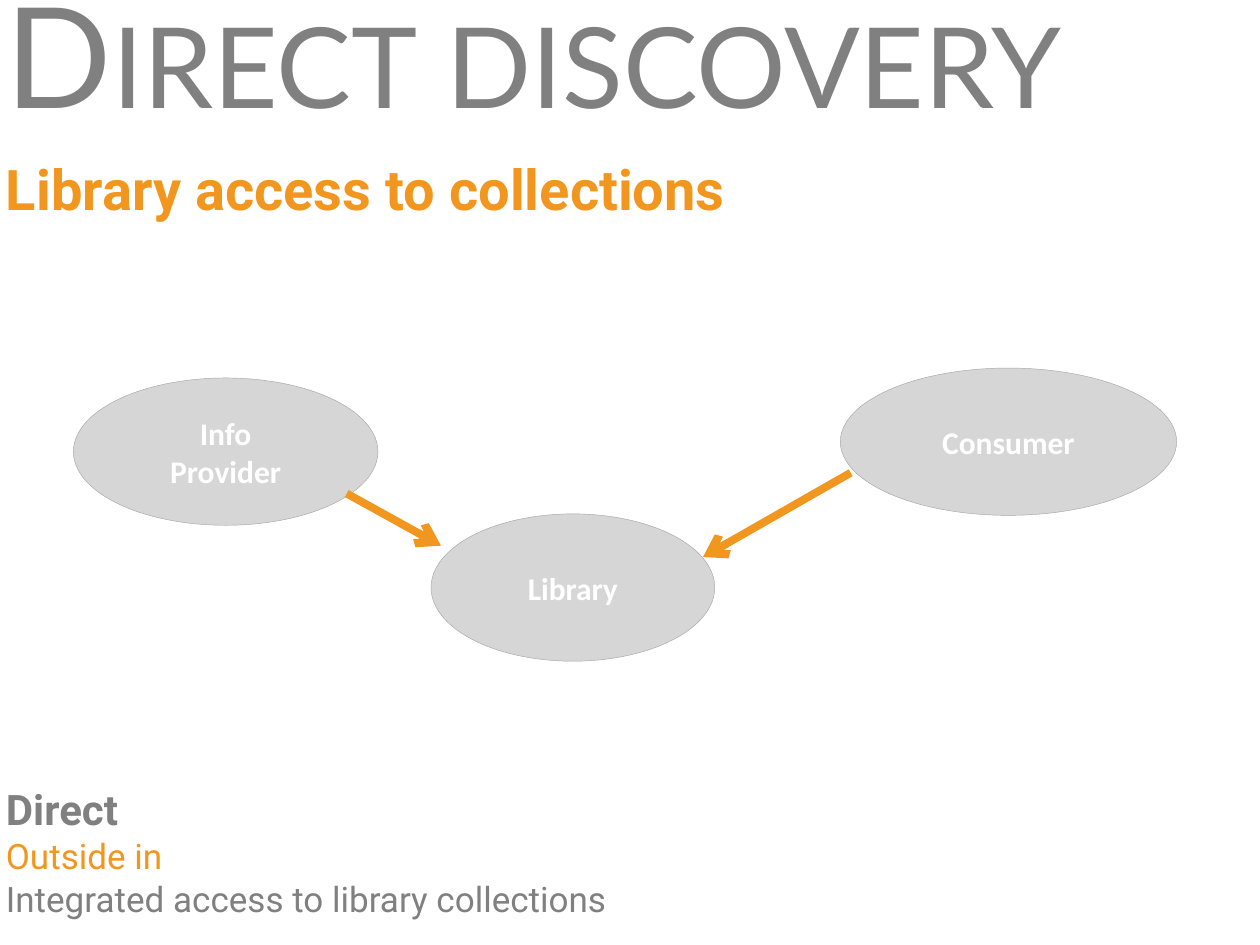
from dataclasses import dataclass

from lxml.etree import SubElement
from pptx import Presentation
from pptx.dml.color import RGBColor
from pptx.enum.shapes import MSO_CONNECTOR, MSO_SHAPE
from pptx.enum.text import MSO_ANCHOR, PP_ALIGN
from pptx.oxml.ns import qn
from pptx.slide import Slide
from pptx.text.text import _Paragraph, _Run
from pptx.util import Cm, Pt

COLOURS = {"grey": "808080", "orange": "F19720", "ellipse": "A6A6A6", "white": "FFFFFF"}
ELLIPSE_HEIGHT = 2.97
ELLIPSE_OPACITY = 46
TEXT_LEFT = -0.13


@dataclass
class Actor:
    lines: list[str]
    left: float
    top: float
    width: float


@dataclass
class Arrow:
    start: tuple[float, float]
    end: tuple[float, float]


@dataclass
class Caption:
    text: str
    top: float
    width: float
    height: float
    size: int
    colour: str
    font: str = "Roboto"
    bold: bool = False
    small_caps: bool = False
    anchor: MSO_ANCHOR = MSO_ANCHOR.MIDDLE


ACTORS = [
    Actor(["Library"], 8.69, 10.36, 5.72),
    Actor(["Consumer"], 16.94, 7.42, 6.78),
    Actor(["Info", "Provider"], 1.48, 7.62, 6.14),
]
ARROWS = [
    Arrow((17.15, 9.53), (14.17, 11.23)),
    Arrow((6.99, 9.95), (8.89, 11)),
]
CAPTIONS = [
    Caption("Direct discovery", -0.76, 25.4, 3.56, 80, "grey", font="Lato",
            small_caps=True, anchor=MSO_ANCHOR.TOP),
    Caption("Library access to collections", 3, 17.78, 1.78, 32, "orange",
            bold=True, anchor=MSO_ANCHOR.TOP),
    Caption("Direct", 15.67, 25.53, 1.27, 24, "grey", bold=True),
    Caption("Outside in", 16.71, 25.53, 1.07, 20, "orange"),
    Caption("Integrated access to library collections", 17.58, 25.53, 1.07, 20, "grey"),
]


def colour(name: str) -> RGBColor:
    return RGBColor.from_string(COLOURS[name])


def add_run(paragraph: _Paragraph, text: str, font: str, size: int,
            colour_name: str, bold: bool) -> _Run:
    run = paragraph.add_run()
    run.text = text
    run.font.name = font
    run.font.size = Pt(size)
    run.font.bold = bold
    run.font.color.rgb = colour(colour_name)
    return run


def add_actor(slide: Slide, actor: Actor) -> None:
    shape = slide.shapes.add_shape(MSO_SHAPE.OVAL, Cm(actor.left), Cm(actor.top),
                                   Cm(actor.width), Cm(ELLIPSE_HEIGHT))
    shape.shadow.inherit = False
    shape.fill.solid()
    shape.fill.fore_color.rgb = colour("ellipse")
    fill_colour = shape._element.spPr.find(qn("a:solidFill"))[0]
    SubElement(fill_colour, qn("a:alpha"), val=str(ELLIPSE_OPACITY * 1000))
    shape.line.color.rgb = colour("ellipse")
    shape.line.width = Pt(0.25)
    shape.text_frame.vertical_anchor = MSO_ANCHOR.MIDDLE
    paragraph = shape.text_frame.paragraphs[0]
    paragraph.alignment = PP_ALIGN.CENTER
    for index, line in enumerate(actor.lines):
        if index:
            paragraph.add_line_break()
        add_run(paragraph, line, "Calibri", 18, "white", True)


def add_arrow(slide: Slide, arrow: Arrow) -> None:
    connector = slide.shapes.add_connector(
        MSO_CONNECTOR.STRAIGHT, *map(Cm, arrow.start), *map(Cm, arrow.end))
    connector.line.color.rgb = colour("orange")
    connector.line.width = Pt(4.5)
    SubElement(connector.line._get_or_add_ln(), qn("a:tailEnd"), type="arrow")
    SubElement(connector._element.spPr, qn("a:effectLst"))


def add_caption(slide: Slide, caption: Caption) -> None:
    box = slide.shapes.add_textbox(Cm(TEXT_LEFT), Cm(caption.top),
                                   Cm(caption.width), Cm(caption.height))
    box.text_frame.word_wrap = True
    box.text_frame.vertical_anchor = caption.anchor
    run = add_run(box.text_frame.paragraphs[0], caption.text, caption.font,
                  caption.size, caption.colour, caption.bold)
    if caption.small_caps:
        run.font._element.set("cap", "small")


def main() -> None:
    presentation = Presentation()
    presentation.slide_width = Cm(25.4)
    presentation.slide_height = Cm(19.05)
    slide = presentation.slides.add_slide(presentation.slide_layouts[6])
    for actor in ACTORS:
        add_actor(slide, actor)
    for arrow in ARROWS:
        add_arrow(slide, arrow)
    for caption in CAPTIONS:
        add_caption(slide, caption)
    presentation.save("out.pptx")


if __name__ == "__main__":
    main()
